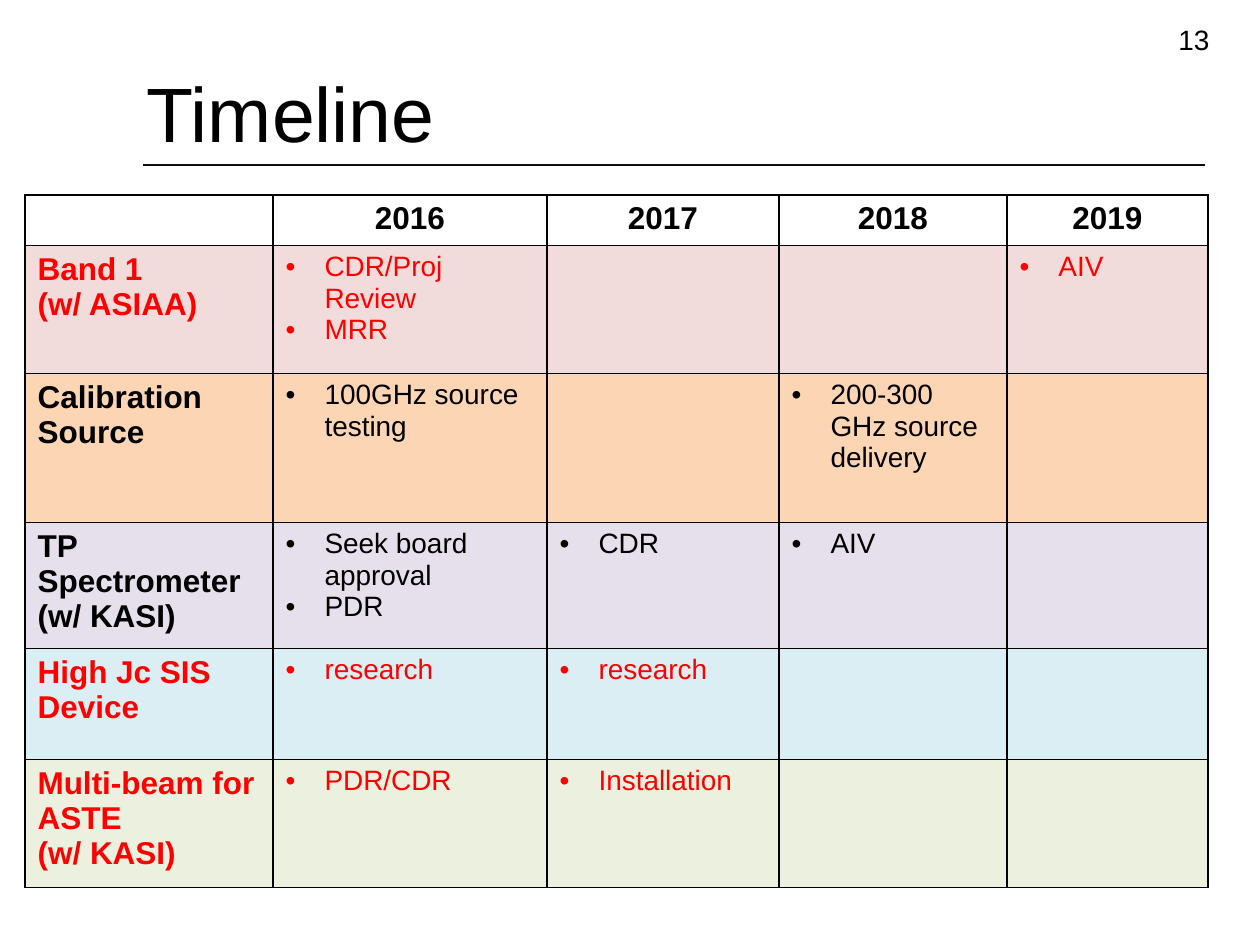
import pptx
import pptx.util
import pptx.dml.color
import pptx.enum.shapes
import pptx.enum.text
import pptx.oxml.ns
from lxml import etree

RGB = pptx.dml.color.RGBColor
BLACK = RGB(0x00, 0x00, 0x00)
RED = RGB(0xFF, 0x00, 0x00)
WHITE = RGB(0xFF, 0xFF, 0xFF)
RULE = RGB(0x0D, 0x0D, 0x0D)
PINK = RGB(0xF2, 0xDC, 0xDB)
ORANGE = RGB(0xFC, 0xD5, 0xB5)
PURPLE = RGB(0xE6, 0xE0, 0xEC)
BLUE = RGB(0xDB, 0xEE, 0xF4)
GREEN = RGB(0xEB, 0xF1, 0xDE)

TITLE = "Timeline"
PAGE = "13"
YEARS = ["2016", "2017", "2018", "2019"]
PROJECTS = [
    (["Band 1", "(w/ ASIAA)"], RED, PINK,
     {"2016": ["CDR/Proj Review", "MRR"], "2019": ["AIV"]}),
    (["Calibration Source"], BLACK, ORANGE,
     {"2016": ["100GHz source testing"], "2018": ["200-300 GHz source delivery"]}),
    (["TP Spectrometer (w/ KASI)"], BLACK, PURPLE,
     {"2016": ["Seek board approval", "PDR"], "2017": ["CDR"], "2018": ["AIV"]}),
    (["High Jc SIS Device"], RED, BLUE,
     {"2016": ["research"], "2017": ["research"]}),
    (["Multi-beam for ASTE", "(w/ KASI)"], RED, GREEN,
     {"2016": ["PDR/CDR"], "2017": ["Installation"]}),
]
COL_WIDTHS = [248, 274, 232, 228, 201]
ROW_HEIGHTS = [47, 128, 149, 117, 111, 128]
INDENT = 39


def px(n):
    return pptx.util.Emu(round(n * 914400 / 126))


def sub(parent, tag, **attrs):
    return etree.SubElement(parent, pptx.oxml.ns.qn(tag), attrs)


def write(tf, lines, size, color, bold=False, align=None, bullet=False):
    for i, line in enumerate(lines):
        p = tf.paragraphs[0] if i == 0 else tf.add_paragraph()
        p.text = line
        p.alignment = align
        if bullet:
            pPr = p._p.get_or_add_pPr()
            pPr.set("marL", str(px(INDENT)))
            pPr.set("indent", str(-px(INDENT)))
            sub(pPr, "a:buFont", typeface="Arial")
            sub(pPr, "a:buChar", char="•")
        p.font.name = "Arial"
        p.font.size = pptx.util.Pt(size)
        p.font.bold = bold
        p.font.color.rgb = color


def style_cell(cell, fill):
    tcPr = cell._tc.get_or_add_tcPr()
    for side in ("a:lnL", "a:lnR", "a:lnT", "a:lnB"):
        ln = sub(tcPr, side, w=str(pptx.util.Pt(1)))
        sub(sub(ln, "a:solidFill"), "a:srgbClr", val=str(BLACK))
    cell.fill.solid()
    cell.fill.fore_color.rgb = fill


prs = pptx.Presentation()
prs.slide_width = px(1260)
prs.slide_height = px(945)
s = prs.slides.add_slide(prs.slide_layouts[5])

title = s.shapes.title
title.left, title.top, title.width, title.height = px(134), px(6), px(1032), px(158)
title.text_frame.vertical_anchor = pptx.enum.text.MSO_ANCHOR.BOTTOM
write(title.text_frame, [TITLE], 44, BLACK, align=pptx.enum.text.PP_ALIGN.LEFT)

page = s.shapes.add_textbox(px(1166), px(16), px(86), px(50))
page.text_frame.word_wrap = True
write(page.text_frame, [PAGE], 16, BLACK)

rule = s.shapes.add_connector(
    pptx.enum.shapes.MSO_CONNECTOR.STRAIGHT, px(143), px(165), px(1205), px(165))
rule.line.color.rgb = RULE
rule.line.width = pptx.util.Pt(1)
sub(rule._element.spPr, "a:effectLst")

table = s.shapes.add_table(
    len(ROW_HEIGHTS), len(COL_WIDTHS), px(25), px(195),
    px(sum(COL_WIDTHS)), px(sum(ROW_HEIGHTS))).table
for col, width in zip(table.columns, COL_WIDTHS):
    col.width = px(width)
for row, height in zip(table.rows, ROW_HEIGHTS):
    row.height = px(height)

fills = [WHITE] + [fill for _, _, fill, _ in PROJECTS]
for row, fill in zip(table.rows, fills):
    for cell in row.cells:
        style_cell(cell, fill)

for c, year in enumerate(YEARS, 1):
    write(table.cell(0, c).text_frame, [year], 18, BLACK, True,
          pptx.enum.text.PP_ALIGN.CENTER)
for r, (name, color, _, milestones) in enumerate(PROJECTS, 1):
    write(table.cell(r, 0).text_frame, name, 18, color, True)
    for year, items in milestones.items():
        cell = table.cell(r, YEARS.index(year) + 1)
        write(cell.text_frame, items, 16, color, bullet=True)

prs.save("out.pptx")
